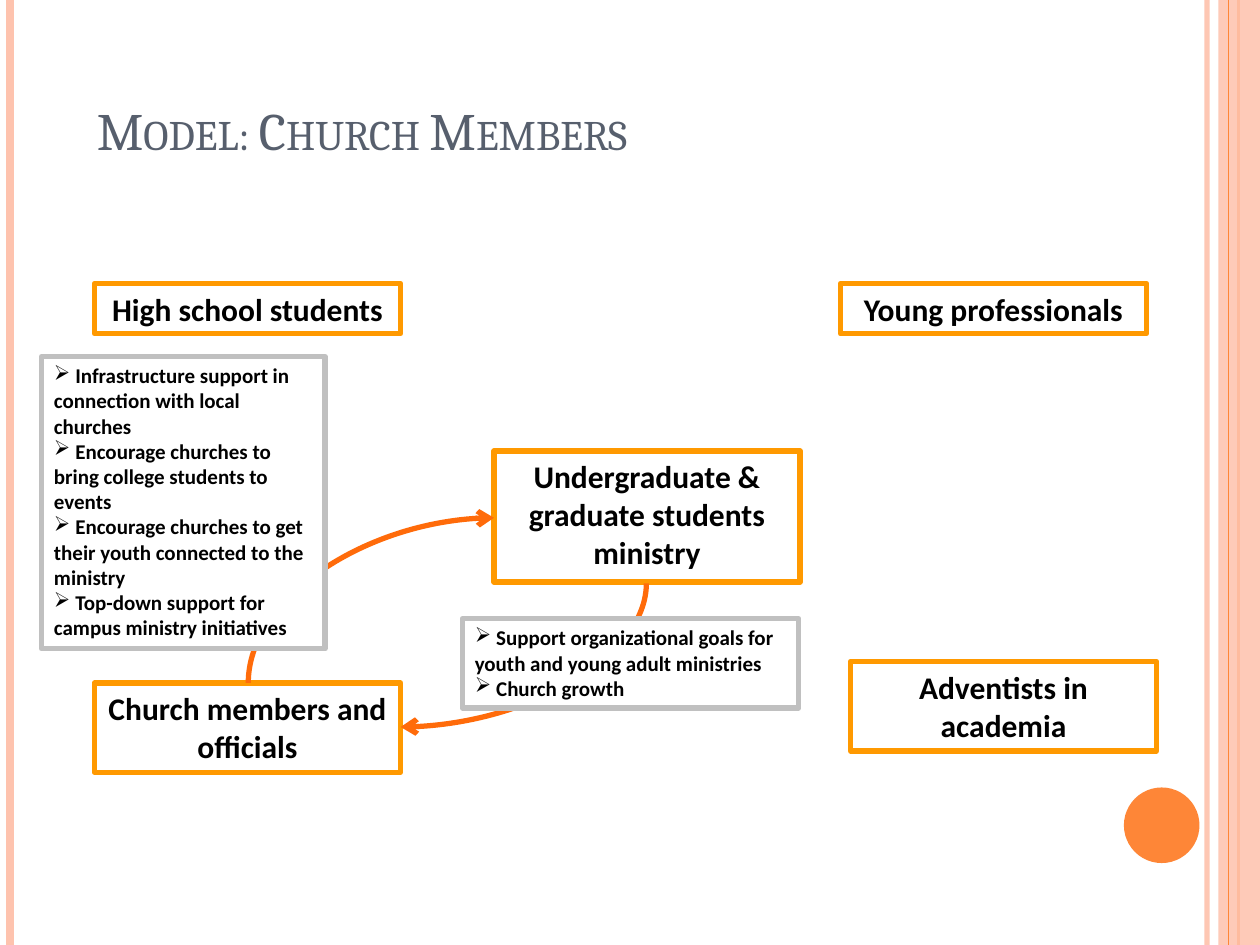
from dataclasses import dataclass

import pptx
import pptx.dml.color
import pptx.enum.shapes
import pptx.enum.text
import pptx.oxml.ns
import pptx.util
from lxml import etree

RGB = pptx.dml.color.RGBColor
KIND = pptx.enum.shapes.MSO_SHAPE
LINK = pptx.enum.shapes.MSO_CONNECTOR
ALIGN = pptx.enum.text.PP_ALIGN
ANCHOR = pptx.enum.text.MSO_ANCHOR
FIT = pptx.enum.text.MSO_AUTO_SIZE
qn = pptx.oxml.ns.qn

SCALE = 9144
WIDE, HIGH = 1000, 750

WHITE = RGB(0xFF, 0xFF, 0xFF)
BLACK = RGB(0x00, 0x00, 0x00)
SLATE = RGB(0x57, 0x5F, 0x6D)
PEACH = RGB(0xFE, 0xC3, 0xAE)
ORANGE = RGB(0xFE, 0x86, 0x37)
AMBER = RGB(0xFF, 0x99, 0x00)
EMBER = RGB(0xFF, 0x6B, 0x0A)
SILVER = RGB(0xC0, 0xC0, 0xC0)


@dataclass
class Stripe:
    x: int
    color: RGB
    width: float
    alpha: int = 100


@dataclass
class Group:
    x: int
    y: int
    height: int
    text: str
    fill: RGB | None = None
    alpha: int = 100
    width: int = 243


@dataclass
class Note:
    x: int
    y: int
    width: int
    height: int
    items: list[str]


@dataclass
class Arc:
    start: tuple[int, int]
    end: tuple[int, int]


STRIPES = [
    Stripe(958, PEACH, 3, 93),
    Stripe(8, PEACH, 4.5),
    Stripe(983, ORANGE, 1.5),
]
EDGE = Stripe(975, ORANGE, 0.75)

GROUPS = [
    Group(392, 358, 104, "Undergraduate & graduate students ministry", WHITE, 80),
    Group(75, 225, 40, "High school students"),
    Group(667, 225, 40, "Young professionals"),
    Group(675, 525, 71, "Adventists in academia"),
    Group(75, 542, 71, "Church members and officials"),
]

ARCS = [
    Arc((197, 542), (392, 411)),
    Arc((513, 463), (318, 577)),
]

NOTES = [
    Note(33, 283, 225, 232, [
        "Infrastructure support in connection with local churches",
        "Encourage churches to bring college students to events",
        "Encourage churches to get their youth connected to the ministry",
        "Top-down support for campus ministry initiatives",
    ]),
    Note(367, 491, 267, 71, [
        "Support organizational goals for youth and young adult ministries",
        "Church growth",
    ]),
]


def px(size: float) -> int:
    return round(size * SCALE)


def fade(node, alpha: int) -> None:
    if alpha < 100:
        color = next(node.iter(qn("a:srgbClr")))
        etree.SubElement(color, qn("a:alpha"), val=str(alpha * 1000))


def add_link(slide, kind, start, end, color: RGB, width: float):
    link = slide.shapes.add_connector(kind, *map(px, (*start, *end)))
    link.line.color.rgb = color
    link.line.width = pptx.util.Pt(width)
    etree.SubElement(link._element.spPr, qn("a:effectLst"))
    return link


def add_stripe(slide, stripe: Stripe) -> None:
    link = add_link(slide, LINK.STRAIGHT, (stripe.x, 0), (stripe.x, HIGH),
                    stripe.color, stripe.width)
    fade(link.line._ln, stripe.alpha)


def add_arc(slide, arc: Arc) -> None:
    (ax, ay), (bx, by) = arc.start, arc.end
    mx, my = (ax + bx) / 2, (ay + by) / 2
    dx, dy = ay - my, mx - ax
    link = add_link(slide, LINK.CURVE, (mx + dx, my + dy), (mx - dx, my - dy),
                    EMBER, 3)
    props = link._element.spPr
    props.find(qn("a:prstGeom")).set("prst", "curvedConnector2")
    props.find(qn("a:xfrm")).set("rot", str(90 * 60000))
    etree.SubElement(link.line._ln, qn("a:tailEnd"), type="arrow")


def add_shape(slide, kind, area, fill: RGB | None, line: RGB | None = None,
              alpha: int = 100):
    shape = slide.shapes.add_shape(kind, *map(px, area))
    shape.shadow.inherit = False
    if fill is None:
        shape.fill.background()
    else:
        shape.fill.solid()
        shape.fill.fore_color.rgb = fill
        fade(shape._element.spPr, alpha)
    if line is None:
        shape.line.fill.background()
    else:
        shape.line.color.rgb = line
        shape.line.width = pptx.util.Pt(3)
    return shape


def add_run(para, text: str, size: int, color: RGB = BLACK,
            face: str = "Calibri", bold: bool = True):
    run = para.add_run()
    run.text = text
    run.font.size = pptx.util.Pt(size)
    run.font.name = face
    run.font.bold = bold
    run.font.color.rgb = color
    return run


def set_frame(shape):
    frame = shape.text_frame
    frame.word_wrap = True
    frame.auto_size = FIT.SHAPE_TO_FIT_TEXT
    frame.vertical_anchor = ANCHOR.TOP
    return frame


def add_group(slide, group: Group) -> None:
    area = (group.x, group.y, group.width, group.height)
    shape = add_shape(slide, KIND.RECTANGLE, area, group.fill, AMBER, group.alpha)
    para = set_frame(shape).paragraphs[0]
    para.alignment = ALIGN.CENTER
    add_run(para, group.text, 18)


def add_note(slide, note: Note) -> None:
    area = (note.x, note.y, note.width, note.height)
    frame = set_frame(add_shape(slide, KIND.RECTANGLE, area, WHITE, SILVER))
    for index, item in enumerate(note.items):
        para = frame.add_paragraph() if index else frame.paragraphs[0]
        para.alignment = ALIGN.LEFT
        props = para._p.get_or_add_pPr()
        props.set("marL", "0")
        props.set("indent", "0")
        etree.SubElement(props, qn("a:buChar"), char="➢")
        add_run(para, " " + item, 12)


def add_title(slide, text: str) -> None:
    frame = slide.shapes.add_textbox(*map(px, (67, 25, 892, 108))).text_frame
    frame.word_wrap = True
    frame.vertical_anchor = ANCHOR.BOTTOM
    run = add_run(frame.paragraphs[0], text, 30, SLATE, "Cambria", False)
    run.font._element.set("cap", "small")


def main() -> None:
    deck = pptx.Presentation()
    deck.slide_width, deck.slide_height = px(WIDE), px(HIGH)
    slide = deck.slides.add_slide(deck.slide_layouts[6])
    for stripe in STRIPES:
        add_stripe(slide, stripe)
    add_shape(slide, KIND.RECTANGLE, (967, 0, 33, HIGH), PEACH, alpha=87)
    add_stripe(slide, EDGE)
    add_shape(slide, KIND.OVAL, (892, 625, 60, 60), ORANGE)
    add_title(slide, "Model: Church Members")
    for group in GROUPS:
        add_group(slide, group)
    for arc in ARCS:
        add_arc(slide, arc)
    for note in NOTES:
        add_note(slide, note)
    deck.save("out.pptx")


if __name__ == "__main__":
    main()
